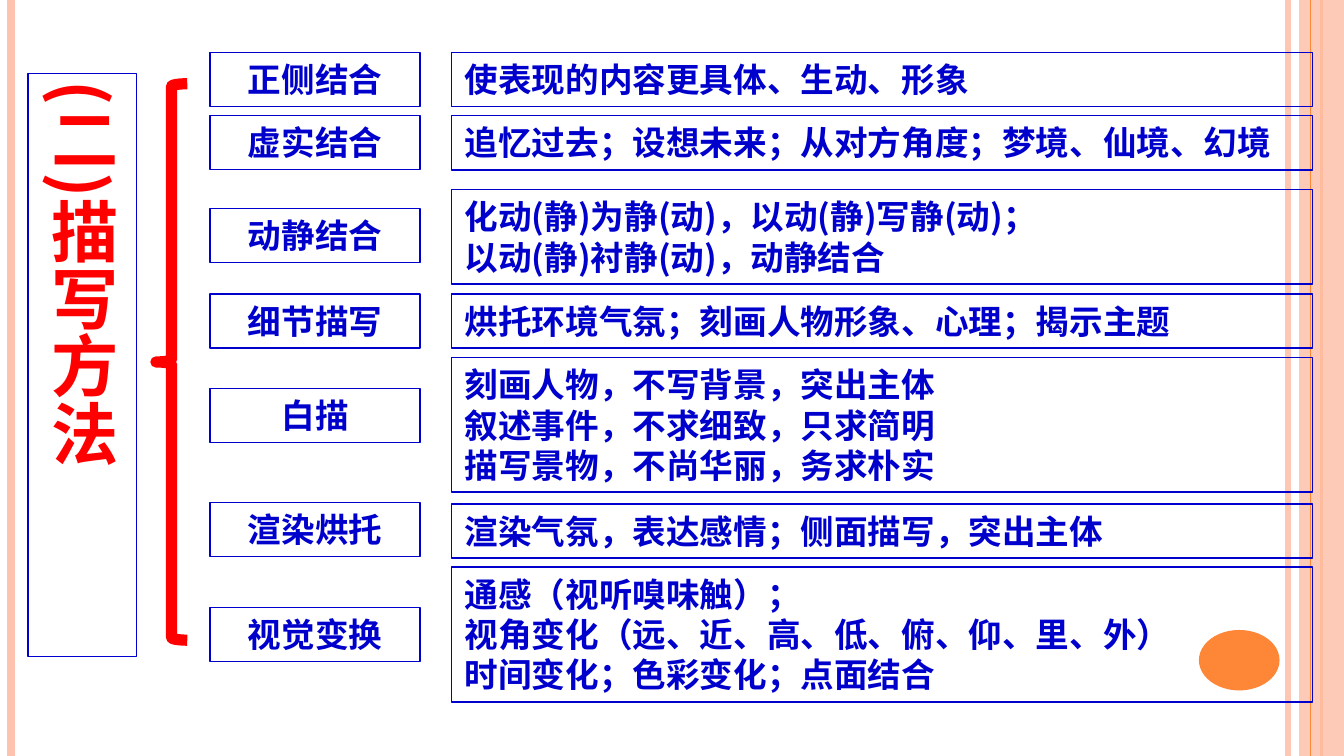
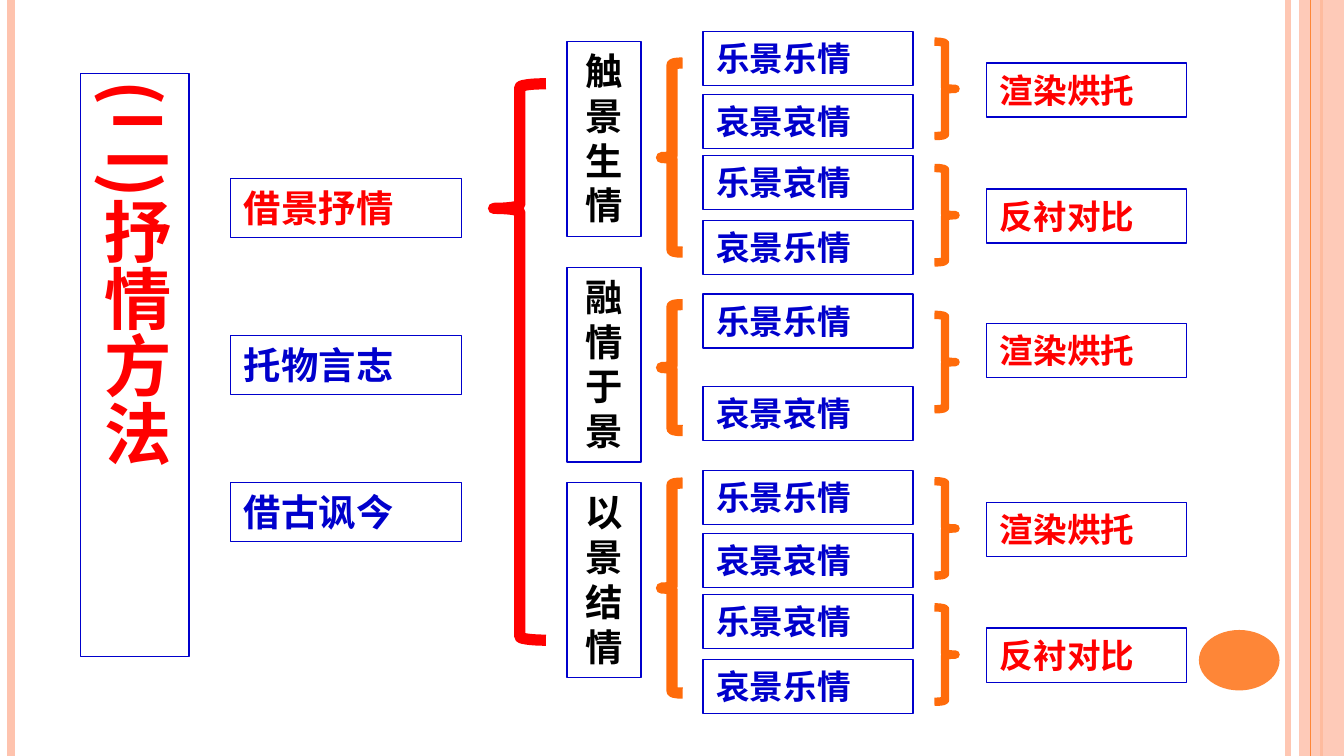
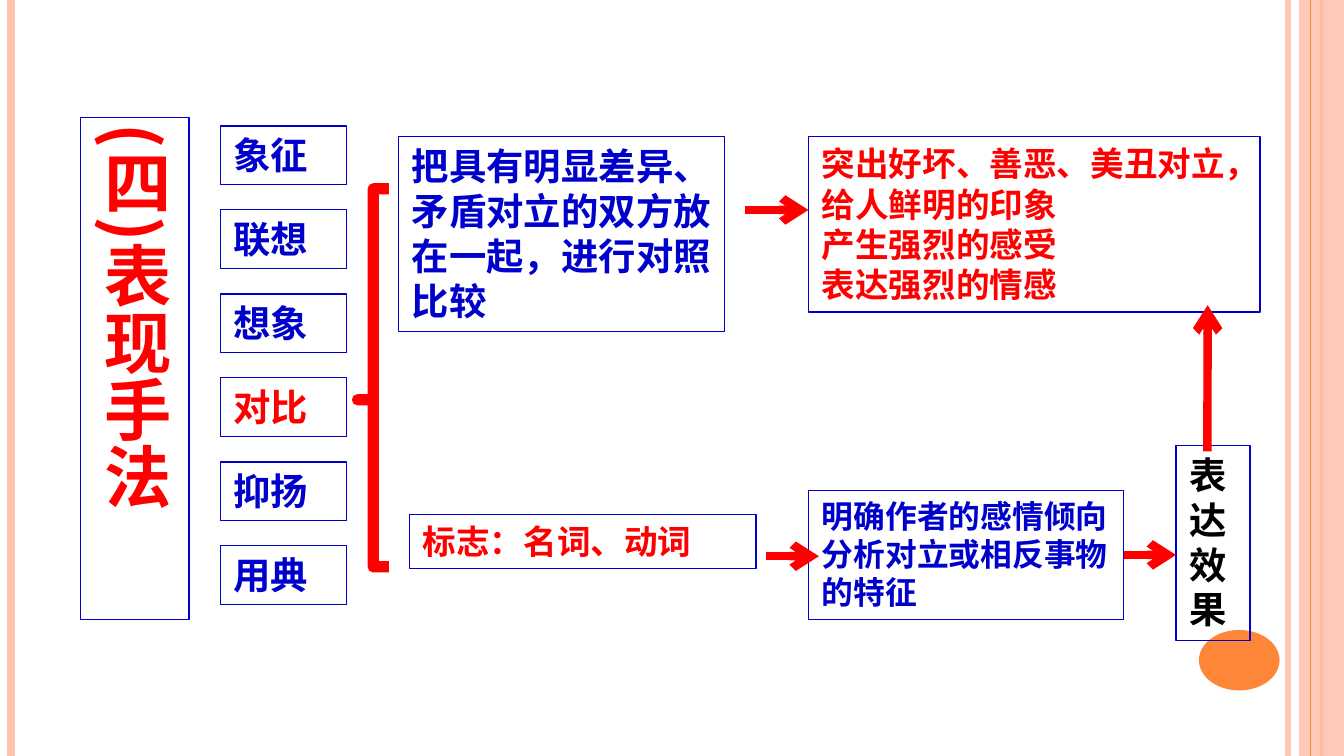
import pptx
import pptx.util
import pptx.dml.color
import pptx.enum.shapes
import pptx.enum.text
import pptx.oxml.ns
import lxml.etree

Pt = pptx.util.Pt
qn = pptx.oxml.ns.qn
RGBColor = pptx.dml.color.RGBColor
SHAPE = pptx.enum.shapes.MSO_SHAPE
STRAIGHT = pptx.enum.shapes.MSO_CONNECTOR.STRAIGHT
ALIGN = pptx.enum.text.PP_ALIGN

COLORS = {"blue": "0000CC", "red": "FF0000", "black": "000000",
          "peach": "FEC3AE", "orange": "FE8637", "brace": "FF6B0A"}
FONT = "Noto Sans CJK SC"
TITLE_FONT = "Noto Sans CJK JP"
WIDTH, HEIGHT = 720, 405


def stroke(shape, color, weight):
    """Outline a shape or connector, without fill or shadow."""
    shape.line.color.rgb = RGBColor.from_string(COLORS[color])
    shape.line.width = Pt(weight)
    if hasattr(shape, "fill"):
        shape.fill.background()
        shape.shadow.inherit = False
    else:
        lxml.etree.SubElement(shape.element.find(qn("p:spPr")), qn("a:effectLst"))


def write(shape, text, size, color="blue", align=ALIGN.LEFT, font=FONT, weight=0.75):
    """Frame a text shape and fill it, one paragraph for each line."""
    stroke(shape, "blue", weight)
    frame_format = {
        "text": text,
        "word_wrap": True,
        "auto_size": pptx.enum.text.MSO_AUTO_SIZE.SHAPE_TO_FIT_TEXT,
        "vertical_anchor": pptx.enum.text.MSO_ANCHOR.TOP,
    }
    for name, value in frame_format.items():
        setattr(shape.text_frame, name, value)
    for paragraph in shape.text_frame.paragraphs:
        paragraph.alignment = align
        paragraph.line_spacing = Pt(1.2 * size)
        run = paragraph.runs[0]
        for name, value in {"name": font, "size": Pt(size), "bold": True}.items():
            setattr(run.font, name, value)
        run.font.color.rgb = RGBColor.from_string(COLORS[color])
    for properties in shape.element.iter(qn("a:pPr")):
        properties.set("hangingPunct", "1")
    east_asian = FONT if font == "Arial" else font
    for properties in shape.element.iter(qn("a:rPr")):
        lxml.etree.SubElement(properties, qn("a:ea"), typeface=east_asian)


presentation = pptx.Presentation()
presentation.slide_width = Pt(WIDTH)
presentation.slide_height = Pt(HEIGHT)

# Slides with their vertical titles: text, left, top, height
titles = [
    ("(二)描写方法", 15, 39.4, 312.5),
    ("(二)抒情方法", 43, 39.4, 312.5),
    ("(四)表现手法", 43, 62.8, 269),
]
slides = []
for text, left, top, height in titles:
    slide = presentation.slides.add_slide(presentation.slide_layouts[5])
    title = slide.shapes.title
    title.left, title.top, title.width, title.height = Pt(left), Pt(top), Pt(58.3), Pt(height)
    write(title, text, 36, "red", font=TITLE_FONT)
    title.text_frame.paragraphs[0].space_before = Pt(0)
    title.element.find(qn("p:txBody")).find(qn("a:bodyPr")).set("vert", "eaVert")
    slides.append(slide)
describing, expressing, techniques = slides

# Side bands and disc, moved to the master
decorations = []
for x, color, weight in [(690, "peach", 3), (6, "peach", 4.5), (708, "orange", 1.5)]:
    line = describing.shapes.add_connector(STRAIGHT, Pt(x), Pt(0), Pt(x), Pt(HEIGHT))
    stroke(line, color, weight)
    decorations.append(line)
band = describing.shapes.add_shape(SHAPE.RECTANGLE, Pt(696), Pt(0), Pt(24), Pt(HEIGHT))
thin_line = describing.shapes.add_connector(STRAIGHT, Pt(702), Pt(0), Pt(702), Pt(HEIGHT))
stroke(thin_line, "orange", 0.75)
disc = describing.shapes.add_shape(SHAPE.OVAL, Pt(642.3), Pt(337.5), Pt(43.2), Pt(32.4))
for shape, color in [(band, "peach"), (disc, "orange")]:
    shape.shadow.inherit = False
    shape.fill.solid()
    shape.fill.fore_color.rgb = RGBColor.from_string(COLORS[color])
    shape.line.fill.background()
for shape, opacity in [(decorations[0], 93), (band, 87)]:
    for color_element in shape.element.iter(qn("a:srgbClr")):
        lxml.etree.SubElement(color_element, qn("a:alpha"), val=str(opacity * 1000))
decorations += [band, thin_line, disc]
for number, shape in enumerate(decorations, 101):
    for properties in shape.element.iter(qn("p:cNvPr")):
        properties.set("id", str(number))
    presentation.slide_master.shapes.element.append(shape.element)

# Slide 1: methods (name, top) beside their effects (top, text)
methods = [
    ("正侧结合", 28.1, 28.1, "使表现的内容更具体、生动、形象"),
    ("虚实结合", 61.9, 61.9, "追忆过去；设想未来；从对方角度；梦境、仙境、幻境"),
    ("动静结合", 111.6, 101.5, "化动(静)为静(动)，以动(静)写静(动)；\n以动(静)衬静(动)，动静结合"),
    ("细节描写", 157.5, 157.5, "烘托环境气氛；刻画人物形象、心理；揭示主题"),
    ("白描", 208, 191.5,
     "刻画人物，不写背景，突出主体\n叙述事件，不求细致，只求简明\n描写景物，不尚华丽，务求朴实"),
    ("渲染烘托", 269.2, 270, "渲染气氛，表达感情；侧面描写，突出主体"),
    ("视觉变换", 325.3, 303.8,
     "通感（视听嗅味触）；\n视角变化（远、近、高、低、俯、仰、里、外）\n时间变化；色彩变化；点面结合"),
]
for name, name_top, effect_top, effect in methods:
    box = describing.shapes.add_textbox(Pt(112.5), Pt(name_top), Pt(112.5), Pt(29))
    write(box, name, 18, align=ALIGN.CENTER)
    height = 7.4 + 21.6 * len(effect.split("\n"))
    box = describing.shapes.add_textbox(Pt(241.9), Pt(effect_top), Pt(461.3), Pt(height))
    write(box, effect, 18, weight=1)

# Slide 2: three ways to express feeling
for text, top, color in [("借景抒情", 95.6, "red"), ("托物言志", 179.8, "blue"),
                         ("借古讽今", 258.6, "blue")]:
    box = expressing.shapes.add_textbox(Pt(123.6), Pt(top), Pt(123.8), Pt(31.5))
    write(box, text, 20, color)

# Slide 2: scene and feeling groups (name, top, tops of the pairs)
pairs = ["乐景乐情", "哀景哀情", "乐景哀情", "哀景乐情"]
groups = [
    ("触景生情", 22.2, [16.8, 50.5, 83.3, 118]),
    ("融情于景", 143.2, [157.5, 207]),
    ("以景结情", 258.6, [252, 285.7, 318.6, 353.3]),
]
for name, top, pair_tops in groups:
    box = expressing.shapes.add_textbox(Pt(303.8), Pt(top), Pt(39.6), Pt(104.4))
    write(box, name, 20, "black", ALIGN.CENTER)
    for pair, pair_top in zip(pairs, pair_tops):
        box = expressing.shapes.add_textbox(Pt(376.6), Pt(pair_top), Pt(112.5), Pt(29))
        write(box, pair, 18)

# Slide 2: results of the pairs (text, top of brace, top of box)
results = [
    ("渲染烘托", 22.3, 33.8), ("反衬对比", 90, 101.3), ("渲染烘托", 168.7, 173.2),
    ("渲染烘托", 257.8, 269.2), ("反衬对比", 325.4, 336.5),
]
for text, brace_top, top in results:
    brace = expressing.shapes.add_shape(
        SHAPE.RIGHT_BRACE, Pt(500.6), Pt(brace_top), Pt(11.3), Pt(50.6))
    stroke(brace, "brace", 4.5)
    box = expressing.shapes.add_textbox(Pt(528.6), Pt(top), Pt(106.9), Pt(29))
    write(box, text, 18, "red")

# Left braces: slide, left, top, width, height, colour, adjustments
braces = [
    (describing, 83.5, 44.9, 16.8, 298.1, "red", (0.083, 0.5)),
    (expressing, 264.4, 44.9, 28.1, 298.1, "red", (0.067, 0.224)),
    (expressing, 354.4, 33.8, 11.3, 101.3, "brace", (0.083, 0.5)),
    (expressing, 354.4, 163.2, 11.3, 67.5, "brace", (0.083, 0.5)),
    (expressing, 354.4, 258.8, 11.3, 112.5, "brace", (0.083, 0.5)),
    (techniques, 191.5, 101.2, 16.8, 202.5, "red", (0, 0.558)),
]
for slide, left, top, width, height, color, adjustments in braces:
    brace = slide.shapes.add_shape(SHAPE.LEFT_BRACE, Pt(left), Pt(top), Pt(width), Pt(height))
    stroke(brace, color, 6)
    for index, value in enumerate(adjustments):
        brace.adjustments[index] = value

# Slide 3: list of techniques at equal steps
for index, text in enumerate(["象征", "联想", "想象", "对比", "抑扬", "用典"]):
    box = techniques.shapes.add_textbox(Pt(118), Pt(67.4 + 45 * index), Pt(67.6), Pt(31.5))
    write(box, text, 20, "red" if text == "对比" else "blue")

# Slide 3: explanation of contrast
explanations = [
    ("把具有明显差异、矛盾对立的双方放在一起，进行对照比较",
     213.5, 73.2, 174.6, 104.4, 20, "blue", "Arial"),
    ("突出好坏、善恶、美丑对立，\n给人鲜明的印象\n产生强烈的感受\n表达强烈的情感",
     433.1, 73.2, 242, 94, 18, "red", FONT),
    ("标志：名词、动词", 219.4, 275.6, 185.6, 29, 18, "red", FONT),
    ("表达效果", 630, 238.7, 39.6, 104.4, 20, "black", FONT),
    ("明确作者的感情倾向\n分析对立或相反事物的特征",
     433.1, 262.8, 168.8, 69, 17, "blue", FONT),
]
for text, left, top, width, height, size, color, font in explanations:
    box = techniques.shapes.add_textbox(Pt(left), Pt(top), Pt(width), Pt(height))
    write(box, text, size, color, font=font)
analysis_box = box

# Slide 3: arrows
arrows = []
for start_x, start_y, end_x, end_y in [
    (410.6, 298, 438.7, 298), (646.8, 241.8, 647, 163.5),
    (399.4, 112.5, 433.1, 112.5), (601.9, 297.3, 630, 297.3),
]:
    arrow = techniques.shapes.add_connector(
        STRAIGHT, Pt(start_x), Pt(start_y), Pt(end_x), Pt(end_y))
    stroke(arrow, "red", 4.5)
    for line in arrow.element.iter(qn("a:ln")):
        lxml.etree.SubElement(line, qn("a:tailEnd"), type="arrow")
    arrows.append(arrow)
arrows[-1].begin_connect(analysis_box, 3)

presentation.save("out.pptx")
